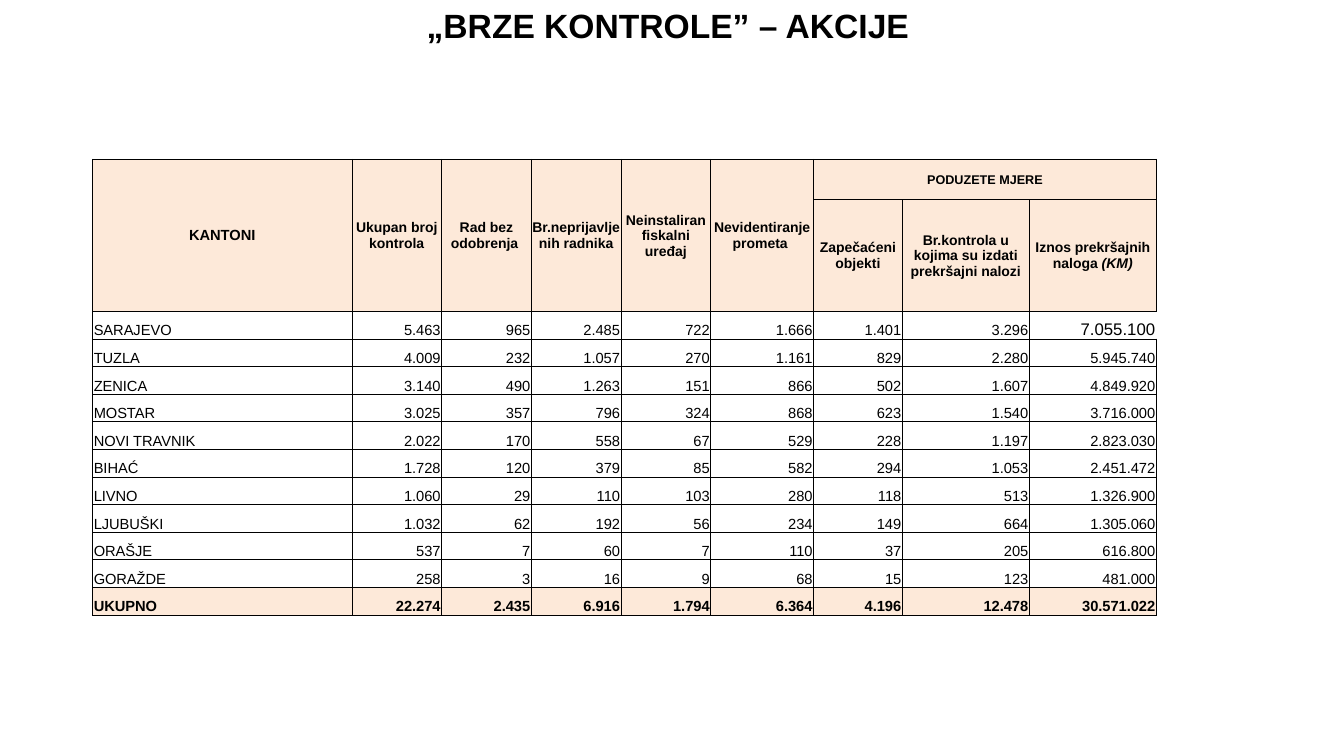
"""Build the slide with the table of quick inspections by canton."""
from lxml.etree import SubElement
from pptx import Presentation
from pptx.dml.color import RGBColor
from pptx.enum.text import MSO_ANCHOR, MSO_AUTO_SIZE, PP_ALIGN
from pptx.oxml.ns import qn
from pptx.util import Inches, Pt

COLORS = {"text": "000000", "border": "000000", "header": "FDE9D9"}
TABLE_HEIGHT = 4.52
HEADER_HEIGHTS = [0.4, 1.11]
COLUMN_WIDTHS = [2.57, 0.89, 0.89, 0.89, 0.89, 1.02, 0.88, 1.26, 1.26]
MARGINS = {"margin_left": 0.01, "margin_right": 0.01, "margin_top": 0.01, "margin_bottom": 0}
ROWS = [
    ["KANTONI", "Ukupan broj kontrola", "Rad bez odobrenja ", "Br.neprijavljenih radnika",
     "Neinstaliran fiskalni uređaj", "Nevidentiranje prometa ", "PODUZETE MJERE", "", ""],
    ["", "", "", "", "", "", "Zapečaćeni objekti",
     "Br.kontrola u kojima su izdati prekršajni nalozi", "Iznos prekršajnih naloga "],
    ["SARAJEVO", "5.463", "965", "2.485", "722", "1.666", "1.401", "3.296", "7.055.100"],
    ["TUZLA", "4.009", "232", "1.057", "270", "1.161", "829", "2.280", "5.945.740"],
    ["ZENICA", "3.140", "490", "1.263", "151", "866", "502", "1.607", "4.849.920"],
    ["MOSTAR", "3.025", "357", "796", "324", "868", "623", "1.540", "3.716.000"],
    ["NOVI TRAVNIK", "2.022", "170", "558", "67", "529", "228", "1.197", "2.823.030"],
    ["BIHAĆ", "1.728", "120", "379", "85", "582", "294", "1.053", "2.451.472"],
    ["LIVNO", "1.060", "29", "110", "103", "280", "118", "513", "1.326.900"],
    ["LJUBUŠKI", "1.032", "62", "192", "56", "234", "149", "664", "1.305.060"],
    ["ORAŠJE", "537", "7", "60", "7", "110", "37", "205", "616.800"],
    ["GORAŽDE", "258", "3", "16", "9", "68", "15", "123", "481.000"],
    ["UKUPNO", "22.274", "2.435", "6.916", "1.794", "6.364", "4.196", "12.478", "30.571.022"],
]
HEADER_COUNT = len(HEADER_HEIGHTS)
LAST_ROW = len(ROWS) - 1
LAST_COLUMN = len(COLUMN_WIDTHS) - 1
SPECIAL_SIZES = {(0, 0): 10.5, (0, 6): 9, (2, LAST_COLUMN): 12}
OPEN_EDGES = {(2, LAST_COLUMN, "R"), (2, LAST_COLUMN + 1, "L")}


def add_span(para, text, size, bold, italic=False):
    span = para.add_run()
    span.text = text
    settings = {"name": "Arial", "size": Pt(size), "bold": bold, "italic": italic}
    for name, value in settings.items():
        setattr(span.font, name, value)
    span.font.color.rgb = RGBColor.from_string(COLORS["text"])


def add_border(cell, side, visible):
    properties = cell._tc.get_or_add_tcPr()
    line = SubElement(properties, qn(f"a:ln{side}"), w=str(Pt(0.5)))
    if visible:
        fill = SubElement(line, qn("a:solidFill"))
        SubElement(fill, qn("a:srgbClr"), val=COLORS["border"])
    else:
        SubElement(line, qn("a:noFill"))


deck = Presentation()
deck.slide_width = Inches(13.33)
deck.slide_height = Inches(7.5)
page = deck.slides.add_slide(deck.slide_layouts[5])

title = page.shapes.title
title_place = {"left": 0.92, "top": 0, "width": 11.5, "height": 0.54}
for name, value in title_place.items():
    setattr(title, name, Inches(value))
title.text_frame.auto_size = MSO_AUTO_SIZE.NONE
title.text_frame.vertical_anchor = MSO_ANCHOR.MIDDLE
title_para = title.text_frame.paragraphs[0]
title_para.alignment = PP_ALIGN.CENTER
title_para.line_spacing = 0.9
add_span(title_para, "„BRZE KONTROLE” – AKCIJE ", 24, True)

frame = page.shapes.add_table(
    len(ROWS), len(COLUMN_WIDTHS), Inches(0.92), Inches(1.58),
    Inches(sum(COLUMN_WIDTHS)), Inches(TABLE_HEIGHT))
table = frame.table
table.first_row = False
table.horz_banding = False
for column, width in zip(table.columns, COLUMN_WIDTHS):
    column.width = Inches(width)
body_count = len(ROWS) - HEADER_COUNT
body_height = (TABLE_HEIGHT - sum(HEADER_HEIGHTS)) / body_count
for row, height in zip(table.rows, HEADER_HEIGHTS + [body_height] * body_count):
    row.height = Inches(height)

for row_index, values in enumerate(ROWS):
    is_header = row_index < HEADER_COUNT
    is_shaded = is_header or row_index == LAST_ROW
    for column_index, text in enumerate(values):
        cell = table.cell(row_index, column_index)
        for name, value in MARGINS.items():
            setattr(cell, name, Inches(value))
        cell.vertical_anchor = MSO_ANCHOR.MIDDLE if is_header else MSO_ANCHOR.BOTTOM
        for side in "LRTB":
            add_border(cell, side, (row_index, column_index, side) not in OPEN_EDGES)
        if is_shaded:
            cell.fill.solid()
            cell.fill.fore_color.rgb = RGBColor.from_string(COLORS["header"])
        else:
            cell.fill.background()
        para = cell.text_frame.paragraphs[0]
        if is_header:
            para.alignment = PP_ALIGN.CENTER
        else:
            para.alignment = PP_ALIGN.RIGHT if column_index else PP_ALIGN.LEFT
        size = SPECIAL_SIZES.get((row_index, column_index), 10 if is_header else 10.5)
        if text:
            add_span(para, text, size, is_shaded)

amount_header = table.cell(1, LAST_COLUMN).text_frame.paragraphs[0]
add_span(amount_header, "(KM)", 10, True, italic=True)

for column_index in range(6):
    table.cell(0, column_index).merge(table.cell(1, column_index))
table.cell(0, 6).merge(table.cell(0, LAST_COLUMN))

deck.save("out.pptx")
